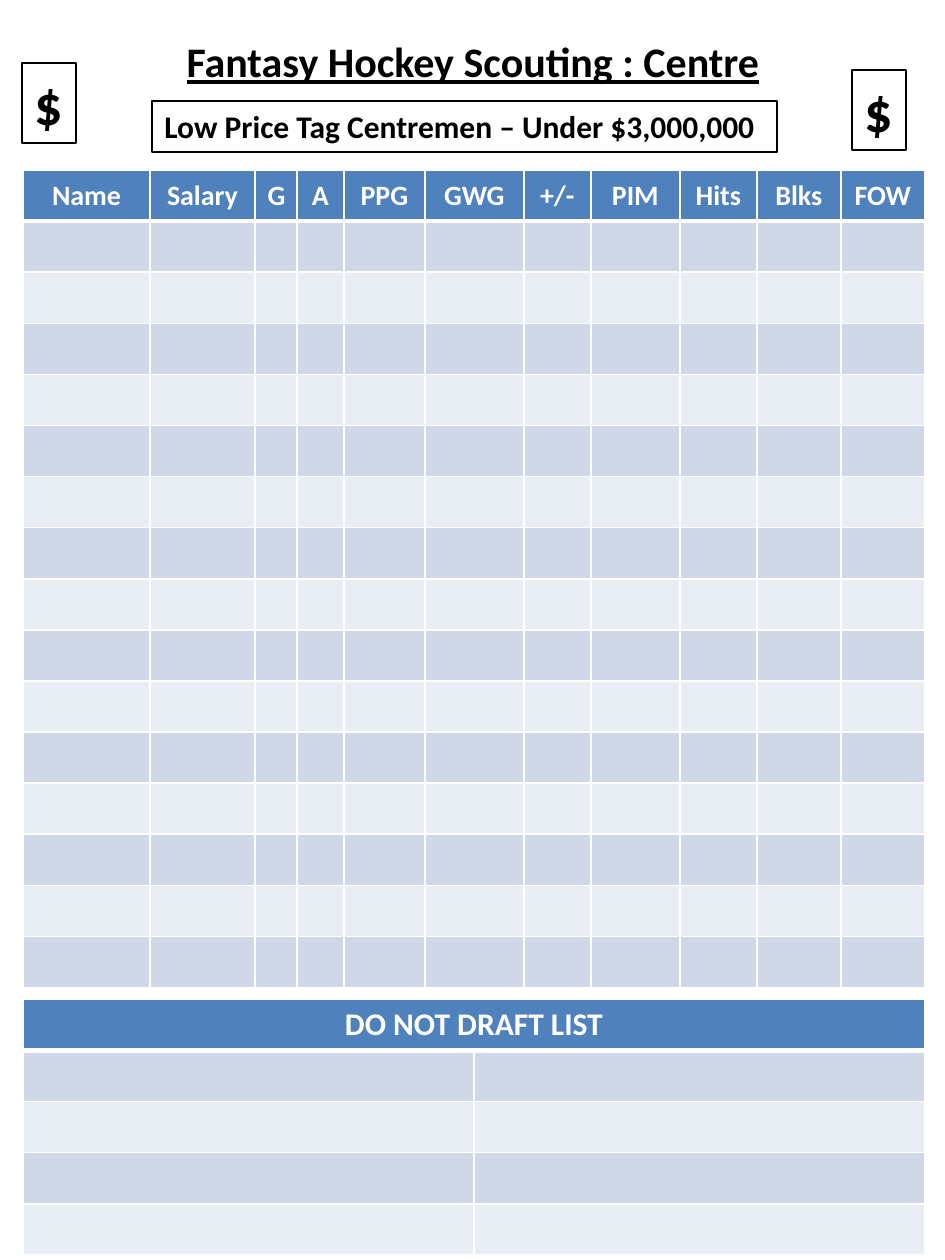
from collections import namedtuple
from dataclasses import dataclass

from lxml.etree import SubElement
from pptx import Presentation
from pptx.dml.color import RGBColor as Rgb
from pptx.enum.shapes import MSO_SHAPE as Shape
from pptx.enum.text import MSO_ANCHOR as Anchor, PP_ALIGN as Align
from pptx.oxml.ns import qn
from pptx.util import Emu, Pt

Box = namedtuple("Box", "left top width height")


@dataclass(frozen=True)
class Theme:
    font: str = "Calibri"
    ink: str = "000000"
    paper: str = "FFFFFF"
    header: str = "4F81BD"
    bands: tuple = ("D0D8E8", "E9EDF4")
    title: int = 24
    label: int = 18
    column: int = 16
    symbol: int = 32
    outline: float = 0.75
    rule: int = 1
    header_rule: int = 3


THEME = Theme()
STATS = {
    "Name": 127, "Salary": 105, "G": 42, "A": 47, "PPG": 81, "GWG": 99,
    "+/-": 67, "PIM": 89, "Hits": 77, "Blks": 84, "FOW": 84,
}


def px(length):
    return Emu(round(length * 914400 / 126))


def emu(box):
    return [px(length) for length in box]


def write(frame, text, size, color=THEME.ink, align=Align.LEFT,
          anchor=Anchor.TOP, underline=False, wrap=True):
    frame.word_wrap = wrap
    frame.vertical_anchor = anchor
    paragraph = frame.paragraphs[0]
    paragraph.alignment = align
    run = paragraph.add_run()
    run.text = text
    font = run.font
    font.name, font.size, font.bold = THEME.font, Pt(size), True
    font.underline = underline
    font.color.rgb = Rgb.from_string(color)


def add_title(slide, box, text):
    title = slide.shapes.add_textbox(*emu(box))
    write(title.text_frame, text, THEME.title, align=Align.CENTER,
          anchor=Anchor.MIDDLE, underline=True)


def add_framed_label(slide, box, text, size):
    label = slide.shapes.add_shape(Shape.RECTANGLE, *emu(box))
    label.shadow.inherit = False
    label.fill.background()
    label.line.color.rgb = Rgb.from_string(THEME.ink)
    label.line.width = Pt(THEME.outline)
    write(label.text_frame, text, size, wrap=False)


def style_cell(cell, row):
    properties = cell._tc.get_or_add_tcPr()
    widths = {
        "a:lnL": THEME.rule,
        "a:lnR": THEME.rule,
        "a:lnT": THEME.header_rule if row == 1 else THEME.rule,
        "a:lnB": THEME.header_rule if row == 0 else THEME.rule,
    }
    for edge, width in widths.items():
        line = SubElement(properties, qn(edge), w=str(Pt(width)))
        fill = SubElement(line, qn("a:solidFill"))
        SubElement(fill, qn("a:srgbClr"), val=THEME.paper)
    cell.fill.solid()
    color = THEME.bands[(row - 1) % 2] if row else THEME.header
    cell.fill.fore_color.rgb = Rgb.from_string(color)


def add_banded_table(slide, box, row_count, column_widths):
    table = slide.shapes.add_table(row_count, len(column_widths), *emu(box)).table
    for column, width in zip(table.columns, column_widths):
        column.width = px(width)
    for index, row in enumerate(table.rows):
        row.height = px(box.height / row_count)
        for cell in row.cells:
            style_cell(cell, index)
    return table


def add_scouting_table(slide, box):
    table = add_banded_table(slide, box, 16, list(STATS.values()))
    for cell, stat in zip(table.rows[0].cells, STATS):
        cell.vertical_anchor = Anchor.MIDDLE
        write(cell.text_frame, stat, THEME.column, color=THEME.paper,
              align=Align.CENTER, anchor=Anchor.MIDDLE)


def add_do_not_draft_list(slide, box):
    table = add_banded_table(slide, box, 5, [box.width / 2] * 2)
    heading = table.cell(0, 0)
    heading.merge(table.cell(0, 1))
    write(heading.text_frame, "DO NOT DRAFT LIST", THEME.label,
          color=THEME.paper, align=Align.CENTER)


def add_heading(slide, box):
    left, top = box.left, box.top
    add_title(slide, Box(left + 48, top, 804, 76), "Fantasy Hockey Scouting : Centre")
    add_framed_label(slide, Box(left + 129, top + 78, 625, 51),
                     "Low Price Tag Centremen – Under $3,000,000", THEME.label)
    for x, y in ((829, 47), (-1, 40)):
        add_framed_label(slide, Box(left + x, top + y, 54, 80), "$", THEME.symbol)


def main():
    deck = Presentation()
    deck.slide_width, deck.slide_height = px(945), px(1260)
    slide = deck.slides.add_slide(deck.slide_layouts[6])
    left, width = 23, sum(STATS.values())
    add_heading(slide, Box(left, 23, width, 129))
    add_scouting_table(slide, Box(left, 170, width, 818))
    add_do_not_draft_list(slide, Box(left, 999, width, 256))
    deck.save("out.pptx")


if __name__ == "__main__":
    main()
